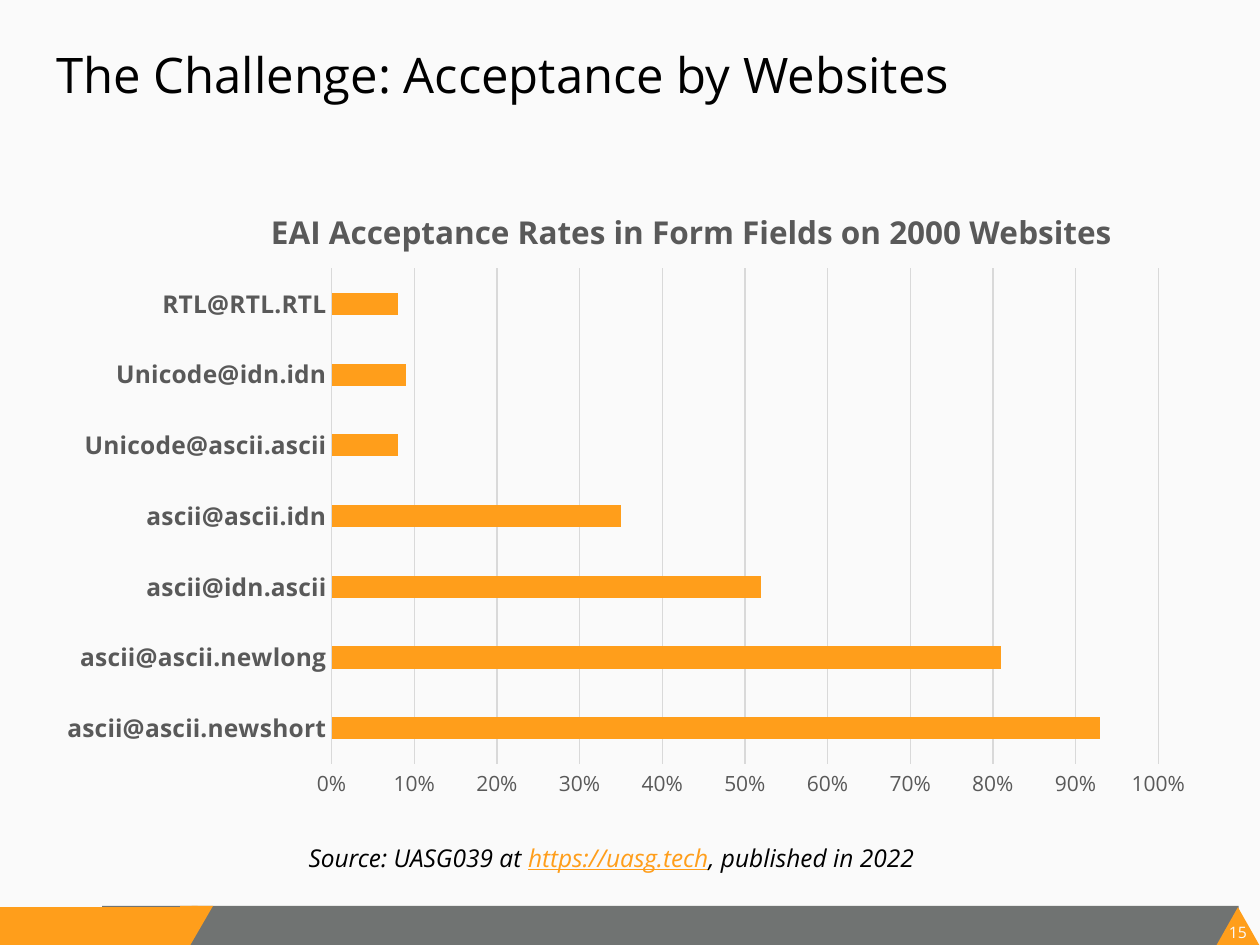
from dataclasses import dataclass

from lxml import etree
from pptx import Presentation
from pptx.chart.data import CategoryChartData
from pptx.dml.color import RGBColor
from pptx.enum.chart import XL_CHART_TYPE as ChartType, XL_TICK_MARK as TickMark
from pptx.enum.shapes import MSO_SHAPE as Shape
from pptx.enum.text import MSO_ANCHOR as Anchor, PP_ALIGN as Align
from pptx.oxml.ns import qn
from pptx.util import Inches, Pt

FONT = "Open Sans"
COLORS = {
    "background": "FAFAFA",
    "text": "000000",
    "orange": "FF9E1B",
    "footer": "707372",
    "label": "595959",
    "grid": "D9D9D9",
}
RATES = {
    "ascii@ascii.newshort": 0.93,
    "ascii@ascii.newlong": 0.81,
    "ascii@idn.ascii": 0.52,
    "ascii@ascii.idn": 0.35,
    "Unicode@ascii.ascii": 0.08,
    "Unicode@idn.idn": 0.09,
    "RTL@RTL.RTL": 0.08,
}


@dataclass
class Box:
    left: float
    top: float
    width: float
    height: float

    def lengths(self) -> list:
        return [Inches(n) for n in (self.left, self.top, self.width, self.height)]


@dataclass
class FooterPart:
    kind: Shape
    box: Box
    color: str
    rotation: float = 0
    adjustment: float | None = None


@dataclass
class Run:
    text: str
    color: str = "text"
    underline: bool = False


FOOTER = [
    FooterPart(Shape.RECTANGLE, Box(0.81, 7.19, 9.02, 0.31), "footer"),
    FooterPart(Shape.RECTANGLE, Box(0, 7.2, 1.5, 0.31), "orange"),
    FooterPart(Shape.ISOSCELES_TRIANGLE, Box(9.65, 7.2, 0.35, 0.31), "orange"),
    FooterPart(Shape.PARALLELOGRAM, Box(1.34, 7.19, 0.35, 0.31), "orange", 180, 0.58),
    FooterPart(Shape.RECTANGLE, Box(1.43, 7.19, 0.14, 0.13), "orange"),
]


def rgb(name: str) -> RGBColor:
    return RGBColor.from_string(COLORS[name])


def set_font(font, size: float, color: str, bold: bool = False) -> None:
    font.name = FONT
    font.size = Pt(size)
    font.bold = bold
    font.color.rgb = rgb(color)


def set_line(line, color: str) -> None:
    line.color.rgb = rgb(color)
    line.width = Pt(0.75)


def add_footer_part(slide, part: FooterPart) -> None:
    shape = slide.shapes.add_shape(part.kind, *part.box.lengths())
    shape.shadow.inherit = False
    shape.fill.solid()
    shape.fill.fore_color.rgb = rgb(part.color)
    shape.line.fill.background()
    shape.rotation = part.rotation
    if part.adjustment is not None:
        shape.adjustments[0] = part.adjustment


def add_text(slide, box: Box, runs: list[Run], size: float, italic: bool = False,
             align: Align = Align.LEFT, inset: bool = True) -> None:
    frame = slide.shapes.add_textbox(*box.lengths()).text_frame
    frame.word_wrap = True
    frame.vertical_anchor = Anchor.TOP
    frame.margin_left = frame.margin_right = Inches(0.1 if inset else 0)
    frame.margin_top = frame.margin_bottom = Inches(0.05 if inset else 0)
    paragraph = frame.paragraphs[0]
    paragraph.alignment = align
    set_font(paragraph.font, size, runs[0].color)
    paragraph.font.italic = italic
    for part in runs:
        run = paragraph.add_run()
        run.text = part.text
        if part.color != runs[0].color:
            run.font.color.rgb = rgb(part.color)
        if part.underline:
            run.font.underline = True


def set_layout(parent, **settings: str | float) -> None:
    """Place a chart part by fractions of the chart area."""
    for old in parent.findall(qn("c:layout")):
        parent.remove(old)
    layout = etree.Element(qn("c:layout"))
    manual = etree.SubElement(layout, qn("c:manualLayout"))
    for name, value in settings.items():
        etree.SubElement(manual, qn(f"c:{name}"), val=str(value))
    text = parent.find(qn("c:tx"))
    parent.insert(0 if text is None else 1, layout)


def add_rates_chart(slide, box: Box) -> None:
    data = CategoryChartData(number_format="0%")
    data.categories = list(RATES)
    data.add_series("Series 1", list(RATES.values()))
    chart = slide.shapes.add_chart(ChartType.BAR_CLUSTERED, *box.lengths(), data).chart
    set_font(chart.font, 10, "text")
    chart.has_legend = False

    # Chart title
    title = chart.chart_title
    title.text_frame.text = "EAI Acceptance Rates in Form Fields on 2000 Websites"
    set_font(title.text_frame.paragraphs[0].font, 18, "label", bold=True)
    title.include_in_layout = False

    # Bars
    plot = chart.plots[0]
    plot.gap_width = 219
    plot.vary_by_categories = False
    fill = plot.series[0].format.fill
    fill.solid()
    fill.fore_color.rgb = rgb("orange")

    # Axes
    categories, values = chart.category_axis, chart.value_axis
    for axis in (categories, values):
        axis.major_tick_mark = axis.minor_tick_mark = TickMark.NONE
    set_font(categories.tick_labels.font, 14, "label", bold=True)
    set_line(categories.format.line, "grid")
    set_font(values.tick_labels.font, 12, "label")
    values.tick_labels.number_format = "0%"
    values.tick_labels.number_format_is_linked = False
    values.minimum_scale, values.maximum_scale, values.major_unit = 0, 1, 0.1
    values.format.line.fill.background()
    set_line(values.major_gridlines.format.line, "grid")

    # Positions inside the chart
    chart_root = chart.element.find(qn("c:chart"))
    set_layout(chart_root.find(qn("c:title")), xMode="edge", yMode="edge", x=0.19, y=0.04)
    set_layout(chart_root.find(qn("c:plotArea")), layoutTarget="inner", xMode="edge",
               yMode="edge", x=0.247, y=0.147, w=0.71, h=0.78)


def main() -> None:
    presentation = Presentation()
    presentation.slide_width, presentation.slide_height = Inches(10), Inches(7.5)
    slide = presentation.slides.add_slide(presentation.slide_layouts[6])
    slide.background.fill.solid()
    slide.background.fill.fore_color.rgb = rgb("background")

    # Footer band and page number
    for part in FOOTER:
        add_footer_part(slide, part)
    add_text(slide, Box(9.74, 7.32, 0.17, 0.15), [Run("15", "background")], 9,
             align=Align.CENTER, inset=False)

    # Title, chart and source
    add_text(slide, Box(0.35, 0.3, 9.24, 1.25),
             [Run("The Challenge: Acceptance by Websites")], 28)
    add_rates_chart(slide, Box(0.35, 1.39, 9.24, 5.04))
    source = [
        Run("Source: UASG039 at "),
        Run("https://uasg.tech", "orange", underline=True),
        Run(", published in 2022"),
    ]
    add_text(slide, Box(2.35, 6.64, 7.35, 0.34), source, 14, italic=True)

    presentation.save("out.pptx")


if __name__ == "__main__":
    main()
